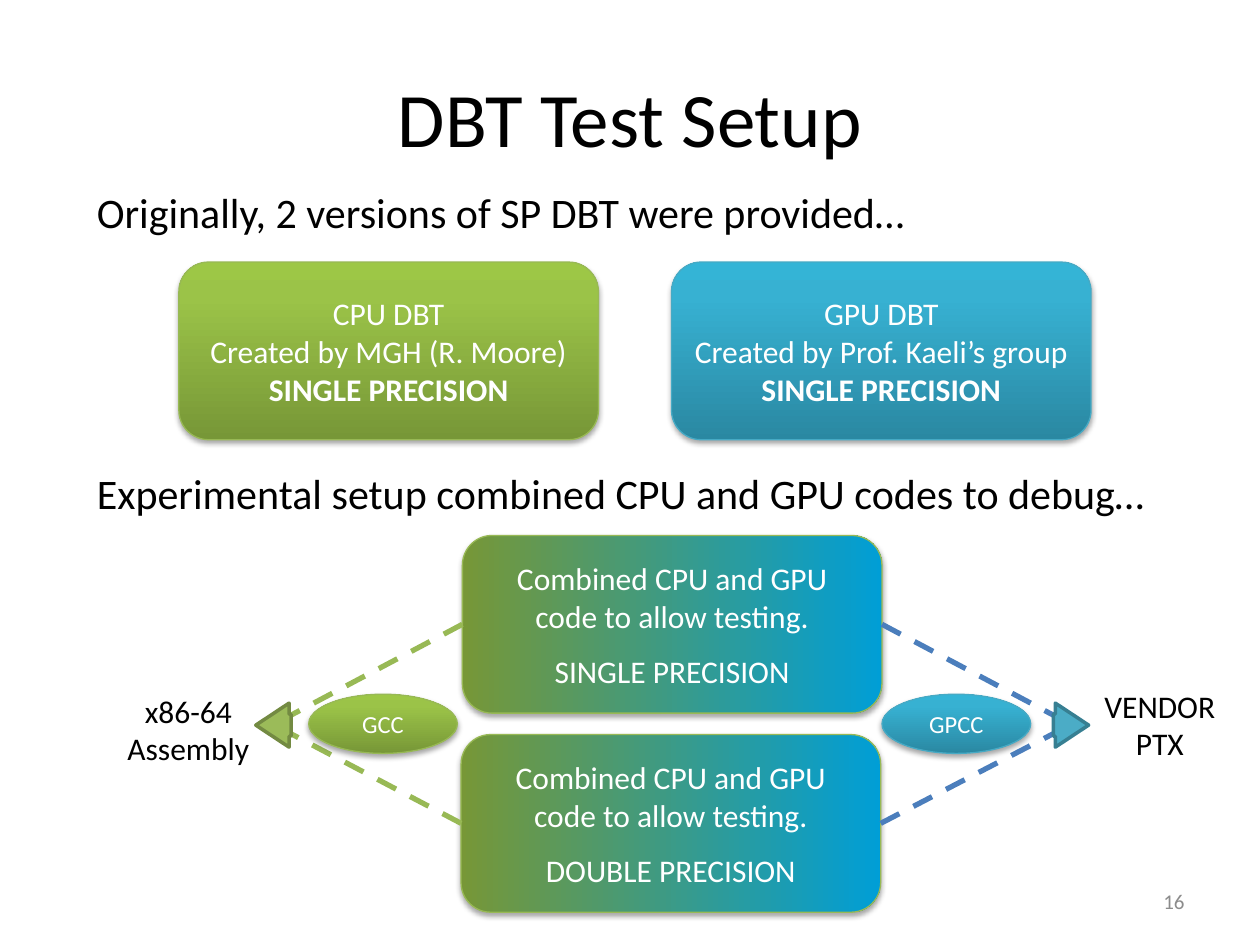
from pptx import Presentation
from pptx.dml.color import RGBColor as RGB
from pptx.enum.dml import MSO_LINE as Dash
from pptx.enum.shapes import MSO_CONNECTOR as Link, MSO_SHAPE as Kind
from pptx.enum.text import MSO_ANCHOR as Anchor, PP_ALIGN as Align
from pptx.oxml import parse_xml
from pptx.oxml.ns import nsdecls, qn
from pptx.util import Inches, Pt

HUES = {
    "black": "000000", "white": "FFFFFF", "gray": "8C8C8C",
    "green": "98B955", "teal": "46AAC5", "blue": "4B7EBC",
    "leaf": "9BBB59", "moss": "738A42", "sky": "4BACC6", "deep": "377F92",
}
FADES = {
    "green": ([(0, "779737"), (80, "9BC348"), (100, "9DC746")], 90),
    "teal": ([(0, "2A88A2"), (80, "37B1D2"), (100, "34B4D6")], 90),
    "mixed": ([(0, "779737"), (100, "009ED6")], 0),
}


def hue(name):
    return RGB.from_string(HUES[name])


def write(frame, text, size=18, color="black", align=Align.CENTER,
          anchor=Anchor.TOP, bold_last=False, gap=0):
    frame.word_wrap = True
    frame.vertical_anchor = anchor
    frame.text = text
    for para in frame.paragraphs:
        para.alignment = align
        para.font.name = "Calibri"
        para.font.size = Pt(size)
        para.font.color.rgb = hue(color)
    para.font.bold = bold_last
    if gap:
        para.space_before = Pt(gap)


class Deck:
    def __init__(self):
        self.show = Presentation()
        self.show.slide_width, self.show.slide_height = Inches(10), Inches(7.5)
        self.slide = self.show.slides.add_slide(self.show.slide_layouts[5])
        self.shapes = self.slide.shapes

    def title(self, text, box):
        head = self.shapes.title
        head.left, head.top, head.width, head.height = map(Inches, box)
        write(head.text_frame, text, size=44, anchor=Anchor.MIDDLE)

    def label(self, text, box, **style):
        item = self.shapes.add_textbox(*map(Inches, box))
        write(item.text_frame, text, **style)

    def shade(self, item, fade):
        stops, angle = FADES[fade]
        item.fill.gradient()
        item.fill.gradient_angle = angle
        group = item._element.spPr.find(".//" + qn("a:gsLst"))
        for old in list(group):
            group.remove(old)
        for place, color in stops:
            group.append(parse_xml(
                f'<a:gs {nsdecls("a")} pos="{place * 1000}">'
                f'<a:srgbClr val="{color}"/></a:gs>'))

    def cast(self, item):
        item.shadow.inherit = False
        item._element.spPr.find(qn("a:effectLst")).append(parse_xml(
            f'<a:outerShdw {nsdecls("a")} blurRad="{Pt(3.1)}" dist="{Pt(1.8)}" '
            'dir="5400000" rotWithShape="0"><a:srgbClr val="000000">'
            '<a:alpha val="35000"/></a:srgbClr></a:outerShdw>'))

    def block(self, text, box, fade, line, kind=Kind.ROUNDED_RECTANGLE, **style):
        item = self.shapes.add_shape(kind, *map(Inches, box))
        self.shade(item, fade)
        item.line.color.rgb = hue(line)
        item.line.width = Pt(0.75)
        self.cast(item)
        frame = item.text_frame
        if kind == Kind.OVAL:
            frame.margin_top = frame.margin_bottom = 0
        write(frame, text, color="white", anchor=Anchor.MIDDLE, **style)
        return item

    def link(self, block, side, end, color):
        x, y = map(Inches, end)
        wire = self.shapes.add_connector(Link.STRAIGHT, x, y, x, y)
        wire.begin_connect(block, side)
        wire.line.color.rgb = hue(color)
        wire.line.width = Pt(3)
        wire.line.dash_style = Dash.DASH
        wire._element.spPr.append(parse_xml(f'<a:effectLst {nsdecls("a")}/>'))

    def arrow(self, box, fill, line, turn=0):
        item = self.shapes.add_shape(Kind.RIGHT_ARROW, *map(Inches, box))
        item.adjustments[0], item.adjustments[1] = 0.5, 0.944
        item.rotation = turn
        item.shadow.inherit = False
        item.fill.solid()
        item.fill.fore_color.rgb = hue(fill)
        item.line.color.rgb = hue(line)
        item.line.width = Pt(2)


def main():
    deck = Deck()
    deck.title("DBT Test Setup", (0.5, 0.3, 9, 1.25))
    deck.label("16", (7.17, 6.95, 2.33, 0.4), size=12, color="gray",
               align=Align.RIGHT, anchor=Anchor.MIDDLE)
    for text, top, wide in (
            ("Originally, 2 versions of SP DBT were provided…", 1.43, 7),
            ("Experimental setup combined CPU and GPU codes to debug…", 3.66, 8.92)):
        deck.label(text, (0.67, top, wide, 0.5), size=24, align=Align.LEFT)

    wide, high = 3.33, 1.41
    for text, left, tone in (
            ("GPU DBT\nCreated by Prof. Kaeli’s group", 5.33, "teal"),
            ("CPU DBT\nCreated by MGH (R. Moore)", 1.42, "green")):
        deck.block(text + "\nSINGLE PRECISION", (left, 2.08, wide, high),
                   tone, tone, bold_last=True)

    tests = [
        deck.block(f"Combined CPU and GPU code to allow testing.\n{mode} PRECISION",
                   (left, top, wide, high), "mixed", "green", gap=9.6)
        for mode, left, top in (("SINGLE", 3.67, 4.25), ("DOUBLE", 3.66, 5.83))]
    for side, x, color in ((1, 2.17, "green"), (3, 8.5, "blue")):
        for test in tests:
            deck.link(test, side, (x, 5.75), color)

    deck.label("x86-64 Assembly", (0.83, 5.44, 1.33, 0.71))
    deck.label("VENDOR\nPTX", (8.54, 5.4, 1.33, 0.71))
    for text, left, tone in (("GPCC", 7, "teal"), ("GCC", 2.45, "green")):
        deck.block(text, (left, 5.51, 1.18, 0.47), tone, tone,
                   kind=Kind.OVAL, size=14)
    deck.arrow((2.03, 5.58, 0.28, 0.35), "leaf", "moss", turn=180)
    deck.arrow((8.36, 5.58, 0.28, 0.35), "sky", "deep")
    deck.show.save("out.pptx")


if __name__ == "__main__":
    main()
